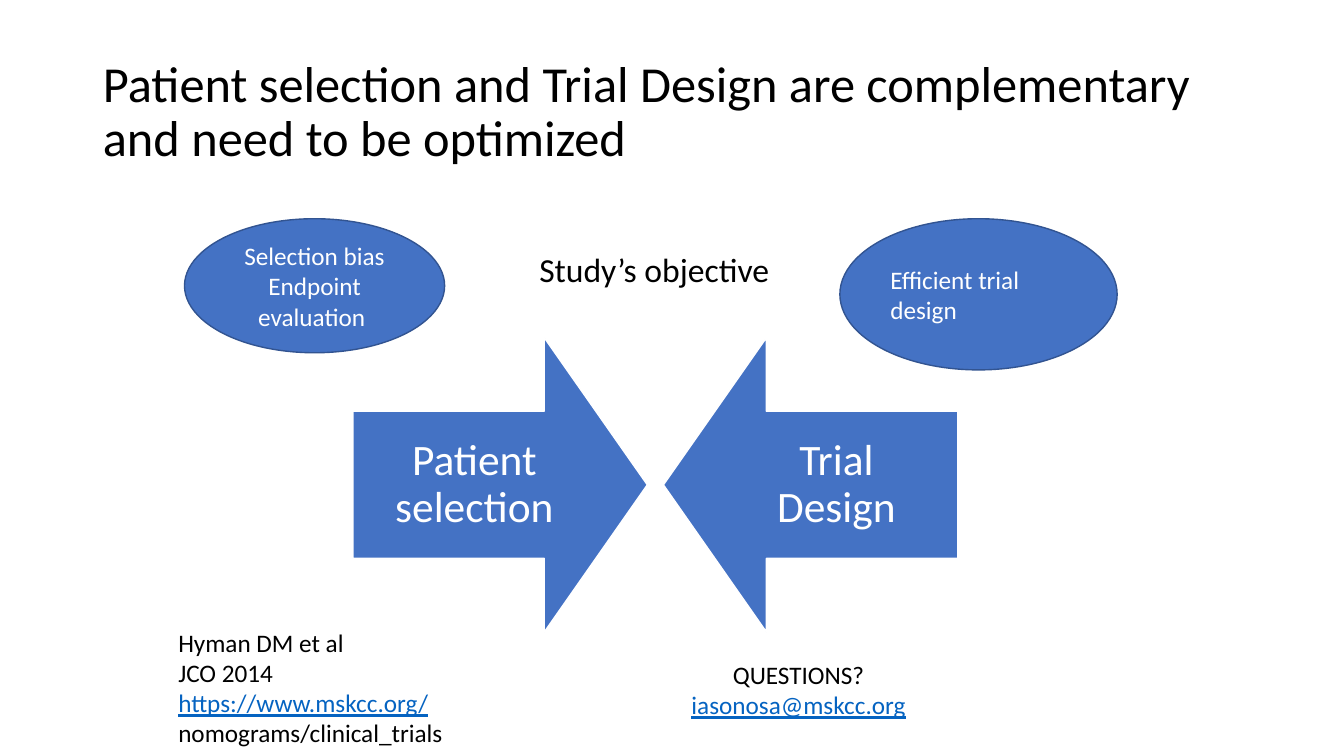
from pptx import Presentation
from pptx.dml.color import RGBColor
from pptx.enum import shapes, text
from pptx.util import Pt

PX = 9144  # 100 px to the inch
FONT = "Calibri"
COLORS = {
    "ink": "000000",
    "paper": "FFFFFF",
    "blue": "4472C4",
    "outline": "325491",
    "link": "0563C1",
}
LEFT, CENTER = text.PP_ALIGN.LEFT, text.PP_ALIGN.CENTER


def rgb(name):
    return RGBColor.from_string(COLORS[name])


def box(*lengths):
    return [length * PX for length in lengths]


def write(frame, paragraphs, size, color="ink", align=LEFT, spacing=None):
    """Fill a frame; each paragraph is a list of (words, is_link) runs."""
    frame.word_wrap = True
    for index, runs in enumerate(paragraphs):
        paragraph = frame.add_paragraph() if index else frame.paragraphs[0]
        paragraph.alignment = align
        if spacing:
            paragraph.line_spacing = spacing
        for words, is_link in runs:
            run = paragraph.add_run()
            run.text = words
            run.font.name = FONT
            run.font.size = Pt(size)
            run.font.color.rgb = rgb("link" if is_link else color)
            if is_link:
                run.font.underline = True


def plain(*lines):
    return [[(line, False)] for line in lines]


def add_title(slide, words):
    title = slide.shapes.title
    title.left, title.top, title.width, title.height = box(92, 40, 1150, 145)
    frame = title.text_frame
    frame.auto_size = text.MSO_AUTO_SIZE.NONE
    frame.vertical_anchor = text.MSO_ANCHOR.MIDDLE
    write(frame, plain(words), 36, spacing=0.9)


def add_filled(slide, kind, place, outline):
    shape = slide.shapes.add_shape(kind, *box(*place))
    shape.shadow.inherit = False
    shape.fill.solid()
    shape.fill.fore_color.rgb = rgb("blue")
    shape.line.color.rgb = rgb(outline)
    shape.line.width = Pt(1)
    shape.text_frame.vertical_anchor = text.MSO_ANCHOR.MIDDLE
    return shape


def add_arrow(slide, kind, left, words):
    arrow = add_filled(slide, kind, (left, 335, 292, 292), "paper")
    arrow.adjustments[0] = 0.5
    arrow.adjustments[1] = 0.35
    frame = arrow.text_frame
    frame.margin_left = frame.margin_right = 24 * PX
    frame.margin_top = frame.margin_bottom = 24 * PX
    write(frame, plain(words), 31, "paper", CENTER, 0.9)


def add_ellipse(slide, place, lines, align):
    ellipse = add_filled(slide, shapes.MSO_SHAPE.OVAL, place, "outline")
    write(ellipse.text_frame, plain(*lines), 18, "paper", align)


def add_text(slide, place, paragraphs, size, align=LEFT):
    frame = slide.shapes.add_textbox(*box(*place)).text_frame
    write(frame, paragraphs, size, align=align)


def main():
    deck = Presentation()
    deck.slide_width, deck.slide_height = box(1333, 750)
    slide = deck.slides.add_slide(deck.slide_layouts[5])

    add_title(slide, "Patient selection and Trial Design are complementary "
                     "and need to be optimized")
    add_arrow(slide, shapes.MSO_SHAPE.RIGHT_ARROW, 350, "Patient selection")
    add_arrow(slide, shapes.MSO_SHAPE.LEFT_ARROW, 658, "Trial Design")
    add_text(slide, (525, 242, 275, 50), plain("Study’s objective"), 24)
    add_ellipse(slide, (833, 217, 275, 150), ["Efficient trial design"], LEFT)
    add_ellipse(slide, (183, 217, 258, 133),
                ["Selection bias", "Endpoint evaluation "], CENTER)

    contact = [[("QUESTIONS? ", False), ("iasonosa@mskcc.org", True)]]
    add_text(slide, (617, 649, 350, 101), contact, 18, CENTER)
    reference = [
        *plain("Hyman DM et al", "JCO 2014"),
        [("https://www.mskcc.org/", True)],
        *plain("nomograms/clinical_trials"),
    ]
    add_text(slide, (167, 617, 350, 131), reference, 18)

    deck.save("out.pptx")


if __name__ == "__main__":
    main()
